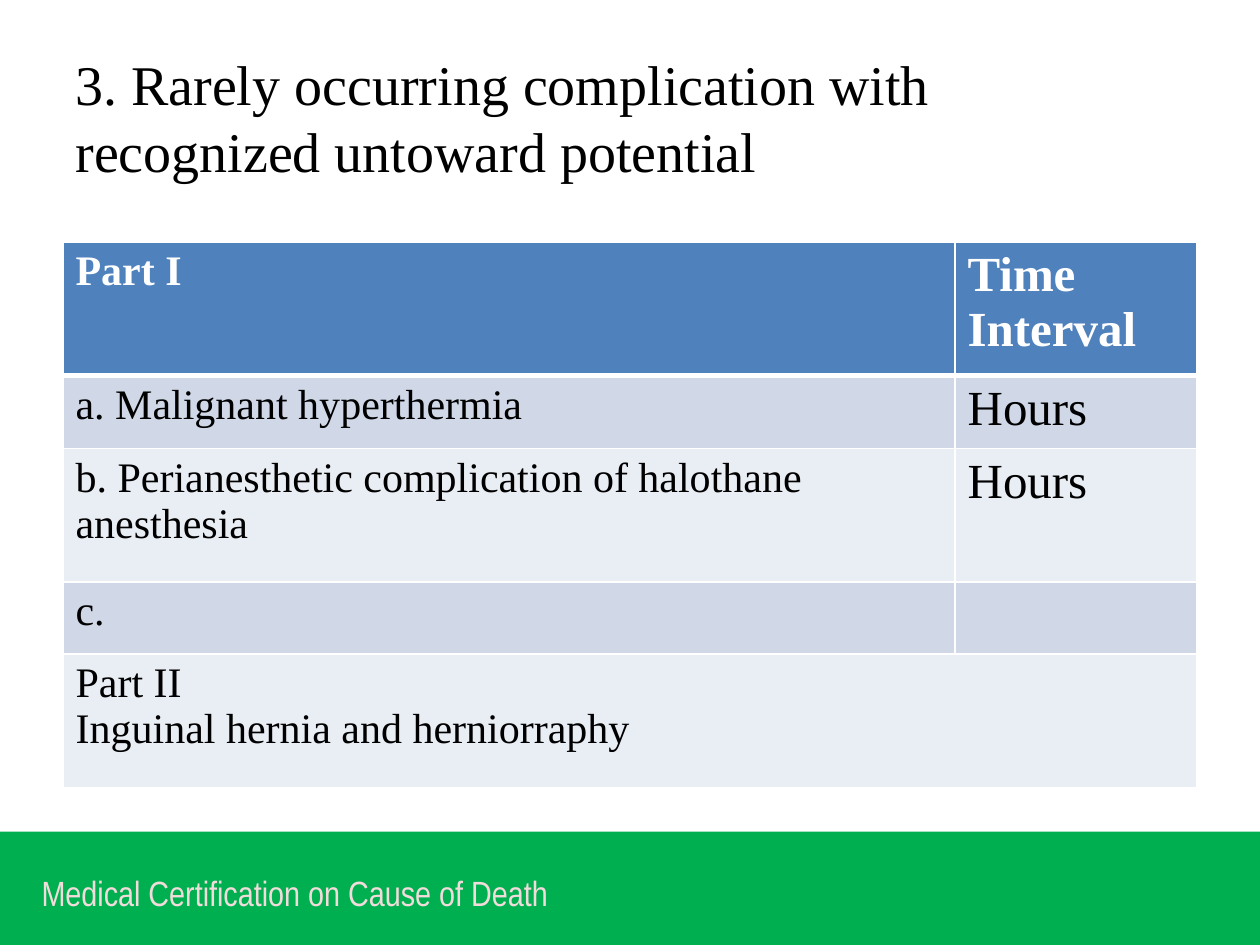
"""Build the slide on a rarely occurring complication in a death certificate."""
from dataclasses import dataclass

import lxml.etree
import pptx
import pptx.dml.color
import pptx.enum.shapes
import pptx.enum.text
import pptx.oxml.ns
import pptx.util

Inches = pptx.util.Inches
RGBColor = pptx.dml.color.RGBColor
Middle = pptx.enum.text.MSO_ANCHOR.MIDDLE

GREEN = RGBColor(0x00, 0xB0, 0x50)
PINK = RGBColor(0xF2, 0xDC, 0xDB)
BLACK = RGBColor(0x00, 0x00, 0x00)
WHITE = RGBColor(0xFF, 0xFF, 0xFF)
BLUE = RGBColor(0x4F, 0x81, 0xBD)
DARK_BAND = RGBColor(0xD0, 0xD8, 0xE8)
LIGHT_BAND = RGBColor(0xE9, 0xED, 0xF4)

SERIF = "Times New Roman"
COLUMN_WIDTHS = (7.08, 1.92)
CELL_SIZES = (24, 28)


@dataclass(frozen=True)
class CertificateRow:
    height: float
    cause: str
    interval: str = ""
    header: bool = False
    merged: bool = False


ROWS = (
    CertificateRow(1.06, "Part I", "Time Interval", header=True),
    CertificateRow(0.58, "a. Malignant hyperthermia", "Hours"),
    CertificateRow(1.06, "b. Perianesthetic complication of halothane anesthesia", "Hours"),
    CertificateRow(0.57, "c."),
    CertificateRow(1.06, "Part II\nInguinal hernia and herniorraphy", merged=True),
)


def write_text(text_frame, text: str, *, size: float, color: RGBColor,
               font: str = SERIF, bold: bool = False) -> None:
    text_frame.text = text
    for paragraph in text_frame.paragraphs:
        paragraph.font.name = font
        paragraph.font.size = pptx.util.Pt(size)
        paragraph.font.bold = bold
        paragraph.font.color.rgb = color


def add_text_box(slide, text: str, left: float, top: float, width: float, height: float,
                 *, inset: tuple[float, float], **text_format) -> None:
    text_frame = slide.shapes.add_textbox(
        Inches(left), Inches(top), Inches(width), Inches(height)).text_frame
    text_frame.word_wrap = True
    text_frame.vertical_anchor = Middle
    text_frame.margin_left = text_frame.margin_right = Inches(inset[0])
    text_frame.margin_top = text_frame.margin_bottom = Inches(inset[1])
    write_text(text_frame, text, **text_format)


def add_borders(cell, widths: dict[str, float]) -> None:
    properties = cell._tc.get_or_add_tcPr()
    qualify = pptx.oxml.ns.qn
    for side, width in widths.items():
        line = lxml.etree.SubElement(properties, qualify(f"a:ln{side}"), w=str(pptx.util.Pt(width)))
        fill = lxml.etree.SubElement(line, qualify("a:solidFill"))
        lxml.etree.SubElement(fill, qualify("a:srgbClr"), val=str(WHITE))


def add_certificate_table(slide, left: float, top: float) -> None:
    table = slide.shapes.add_table(
        len(ROWS), len(COLUMN_WIDTHS), Inches(left), Inches(top),
        Inches(sum(COLUMN_WIDTHS)), Inches(sum(row.height for row in ROWS))).table
    for column, width in zip(table.columns, COLUMN_WIDTHS):
        column.width = Inches(width)
    for index, row in enumerate(ROWS):
        table.rows[index].height = Inches(row.height)
        band = BLUE if row.header else DARK_BAND if index % 2 else LIGHT_BAND
        top_width = 3 if index == 1 else 1
        bottom_width = 3 if row.header else 1
        for cell, text, size in zip(table.rows[index].cells, (row.cause, row.interval), CELL_SIZES):
            add_borders(cell, {"L": 1, "R": 1, "T": top_width, "B": bottom_width})
            cell.fill.solid()
            cell.fill.fore_color.rgb = band
            write_text(cell.text_frame, text, size=size,
                       color=WHITE if row.header else BLACK, bold=row.header)
        if row.merged:
            table.cell(index, 0).merge(table.cell(index, len(COLUMN_WIDTHS) - 1))


def add_footer_band(slide, top: float, width: float, height: float) -> None:
    shape = slide.shapes.add_shape(pptx.enum.shapes.MSO_SHAPE.RECTANGLE,
                                   0, Inches(top), Inches(width), Inches(height))
    shape.shadow.inherit = False
    shape.fill.solid()
    shape.fill.fore_color.rgb = GREEN
    shape.line.fill.background()


def main() -> None:
    presentation = pptx.Presentation()
    presentation.slide_width = Inches(10)
    presentation.slide_height = Inches(7.5)
    slide = presentation.slides.add_slide(presentation.slide_layouts[6])
    add_footer_band(slide, 6.6, 10, 0.9)
    add_text_box(slide, "Medical Certification on Cause of Death", 0.33, 6.85, 5.17, 0.47,
                 inset=(0, 0), size=20, color=PINK, font="Arial Narrow")
    add_text_box(slide, "3. Rarely occurring complication with recognized untoward potential",
                 0.5, 0.3, 9, 1.25, inset=(0.1, 0.05), size=32, color=BLACK)
    add_certificate_table(slide, 0.5, 1.92)
    presentation.save("out.pptx")


if __name__ == "__main__":
    main()
